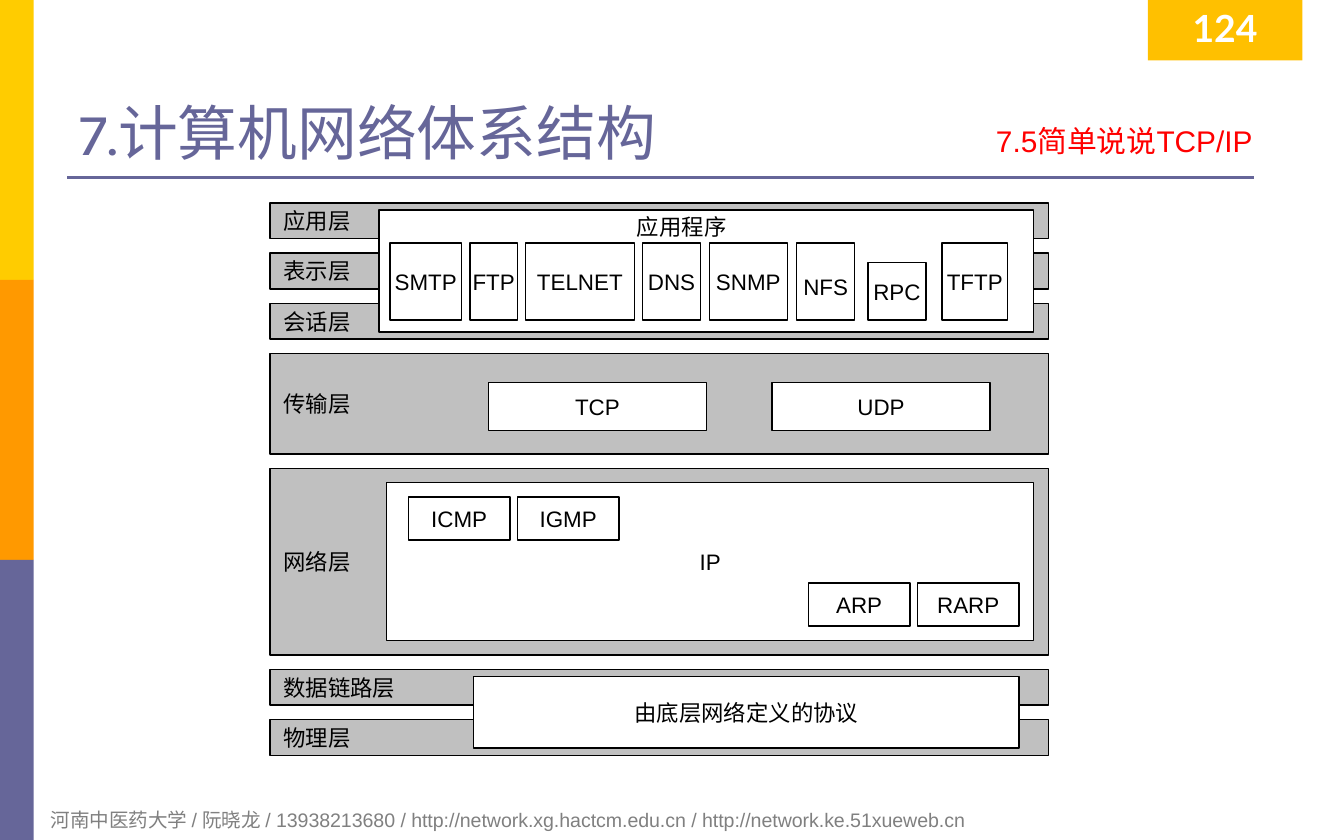
import lxml.etree
import pptx
import pptx.dml.color
import pptx.enum.shapes
import pptx.enum.text
import pptx.oxml.ns
import pptx.util

RGBColor = pptx.dml.color.RGBColor
ALIGN = pptx.enum.text.PP_ALIGN
ANCHOR = pptx.enum.text.MSO_ANCHOR

YELLOW = RGBColor(0xFF, 0xCC, 0x00)
ORANGE = RGBColor(0xFF, 0x99, 0x00)
VIOLET = RGBColor(0x66, 0x66, 0x99)
AMBER = RGBColor(0xFF, 0xC0, 0x00)
RED = RGBColor(0xFF, 0x00, 0x00)
GRAY = RGBColor(0x80, 0x80, 0x80)
SILVER = RGBColor(0xC0, 0xC0, 0xC0)
WHITE = RGBColor(0xFF, 0xFF, 0xFF)
BLACK = RGBColor(0, 0, 0)

WIDTH, HEIGHT = 10, 6.25
# Diagram area, in inches, and the number of grid columns and rows in it
LEFT, TOP, RIGHT, BOTTOM = 2.01, 1.51, 7.8, 5.62
COLUMNS, ROWS = 107, 77
LAYER_GAP = 2


def cells(column, row, columns, rows):
    """Turn diagram grid cells into a place on the slide in inches."""
    cell_width = (RIGHT - LEFT) / COLUMNS
    cell_height = (BOTTOM - TOP) / ROWS
    return (LEFT + column * cell_width, TOP + row * cell_height,
            columns * cell_width, rows * cell_height)


class Page:
    text_style = {"size": 12, "name": "Arial", "color": BLACK, "bold": False}
    margins = (0.1, 0.05, 0.1, 0.05)
    narrow_margins = (0.09, 0.04, 0.09, 0.04)

    def __init__(self, presentation):
        self.slide = presentation.slides.add_slide(presentation.slide_layouts[5])

    def place(self, shape, box):
        for name, value in zip(("left", "top", "width", "height"), box):
            setattr(shape, name, pptx.util.Inches(value))

    def set_text(self, shape, text, align=ALIGN.CENTER, anchor=ANCHOR.MIDDLE,
                 margins=None, wrap=False, **changes):
        frame = shape.text_frame
        frame.text = text
        sides = ("margin_left", "margin_top", "margin_right", "margin_bottom")
        settings = dict(zip(sides, map(pptx.util.Inches, margins or self.margins)))
        settings.update(word_wrap=wrap, vertical_anchor=anchor,
                        auto_size=pptx.enum.text.MSO_AUTO_SIZE.NONE)
        for name, value in settings.items():
            setattr(frame, name, value)
        style = {**self.text_style, **changes}
        paragraph = frame.paragraphs[0]
        paragraph.alignment = align
        font = paragraph.runs[0].font
        font.color.rgb = style.pop("color")
        style["size"] = pptx.util.Pt(style["size"])
        for name, value in style.items():
            setattr(font, name, value)

    def title(self, text, box, **style):
        shape = self.slide.shapes.title
        self.place(shape, box)
        self.set_text(shape, text, **style)

    def label(self, text, box, **style):
        shape = self.slide.shapes.add_textbox(*map(pptx.util.Inches, box))
        self.set_text(shape, text, **style)

    def block(self, box, fill=WHITE, text="", outline=True, **style):
        shape = self.slide.shapes.add_shape(
            pptx.enum.shapes.MSO_SHAPE.RECTANGLE, *map(pptx.util.Inches, box))
        shape.shadow.inherit = False
        shape.fill.solid()
        shape.fill.fore_color.rgb = fill
        if outline:
            shape.line.color.rgb = BLACK
            shape.line.width = pptx.util.Pt(0.75)
        else:
            shape.line.fill.background()
        if text:
            self.set_text(shape, text, **style)

    def rule(self, start, end, y):
        line = self.slide.shapes.add_connector(
            pptx.enum.shapes.MSO_CONNECTOR.STRAIGHT,
            *map(pptx.util.Inches, (start, y, end, y)))
        line.line.color.rgb = VIOLET
        line.line.width = pptx.util.Pt(1.5)
        lxml.etree.SubElement(line._element.spPr, pptx.oxml.ns.qn("a:effectLst"))


def main():
    presentation = pptx.Presentation()
    presentation.slide_width = pptx.util.Inches(WIDTH)
    presentation.slide_height = pptx.util.Inches(HEIGHT)
    page = Page(presentation)

    # Side bands, title rule and footer
    band = HEIGHT / 3
    for index, color in enumerate((YELLOW, ORANGE, VIOLET)):
        page.block((0, index * band, WIDTH / 40, band), color, outline=False)
    page.rule(0.5, 9.33, 1.32)
    page.label("河南中医药大学 / 阮晓龙 / 13938213680 / http://network.xg.hactcm.edu.cn"
               " / http://network.ke.51xueweb.cn", (0.28, 5.96, 8.35, 0.28),
               align=ALIGN.LEFT, anchor=ANCHOR.TOP, wrap=True, size=10.5, color=GRAY)

    # Headings and page number
    heading = {"margins": page.narrow_margins, "wrap": True}
    page.title("7.计算机网络体系结构", (0.5, 0.25, 9, 1.04), align=ALIGN.LEFT,
               anchor=ANCHOR.BOTTOM, size=32, name="Karla", color=VIOLET, **heading)
    page.block((8.54, 0, 1.15, 0.45), AMBER, "124", outline=False, anchor=ANCHOR.TOP,
               size=20, name="Lato", color=WHITE, bold=True, **heading)
    page.label("7.5简单说说TCP/IP", (6.26, 0.87, 3.15, 0.36), align=ALIGN.RIGHT,
               anchor=ANCHOR.TOP, size=16, color=RED, **heading)

    # Seven layers, stacked with equal gaps
    layers = (("应用层", 5), ("表示层", 5), ("会话层", 5), ("传输层", 14),
              ("网络层", 26), ("数据链路层", 5), ("物理层", 5))
    row = 0
    for name, rows in layers:
        page.block(cells(0, row, COLUMNS, rows), SILVER, name, align=ALIGN.LEFT)
        row += rows + LAYER_GAP

    # Application protocols: name, column, columns
    page.block(cells(15, 1, 90, 17))
    page.label("应用程序", cells(48.6, 0.56, 16, 5.6), anchor=ANCHOR.TOP)
    applications = (("SMTP", 16.5, 9.8), ("FTP", 27.5, 6.5), ("TELNET", 35.1, 15),
                    ("DNS", 51.2, 8), ("SNMP", 60.4, 10.7), ("NFS", 72.4, 8),
                    ("RPC", 82.2, 8), ("TFTP", 92.4, 9))
    base = 16.3
    for name, column, columns in applications:
        rows = 8 if name == "RPC" else 10.7
        margins = (0.1, 0.13, 0.1, 0.05) if name == "NFS" else None
        page.block(cells(column, base - rows, columns, rows), text=name, margins=margins)

    # Transport protocols
    for name, column in (("TCP", 30), ("UDP", 69)):
        page.block(cells(column, 25, 30, 6.75), text=name)

    # Network protocols
    page.block(cells(16, 39, 89, 22), text="IP")
    for name, column, row in (("ICMP", 19, 41), ("IGMP", 34, 41),
                              ("ARP", 74, 53), ("RARP", 89, 53)):
        page.block(cells(column, row, 14, 6), text=name)

    # Protocols of the two lowest layers
    page.block(cells(28, 66, 75, 10), text="由底层网络定义的协议")

    presentation.save("out.pptx")


if __name__ == "__main__":
    main()
